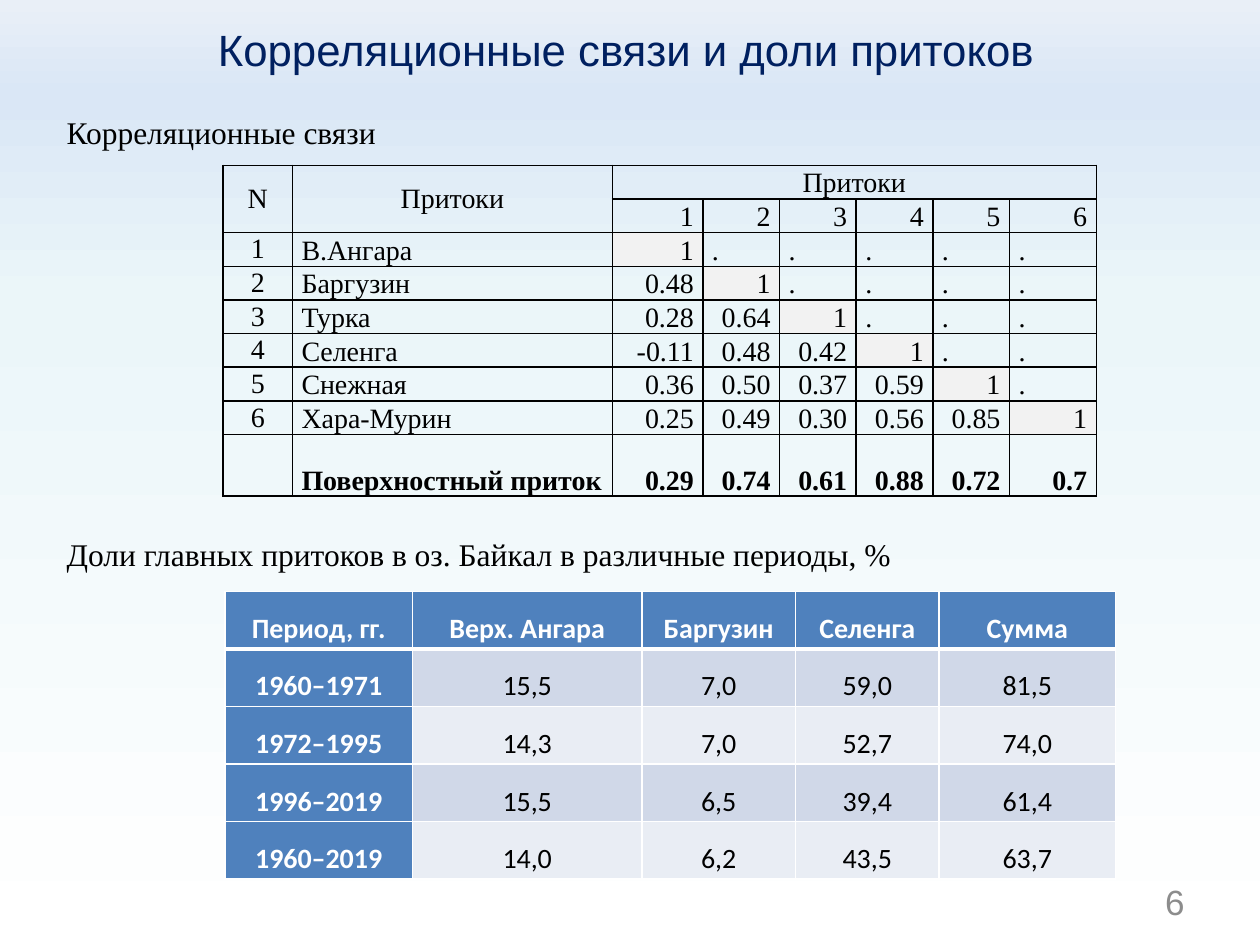
from copy import deepcopy

from lxml.etree import SubElement
from pptx import Presentation
from pptx.dml.color import RGBColor
from pptx.enum.text import MSO_ANCHOR, MSO_AUTO_SIZE, PP_ALIGN
from pptx.oxml.ns import qn
from pptx.util import Pt

NAVY = RGBColor(0x00, 0x20, 0x60)
BLACK = RGBColor(0x00, 0x00, 0x00)
WHITE = RGBColor(0xFF, 0xFF, 0xFF)
GRAY = RGBColor(0x8C, 0x8C, 0x8C)
PALE = RGBColor(0xF2, 0xF2, 0xF2)
BLUE = RGBColor(0x4F, 0x81, 0xBD)
BANDS = RGBColor(0xD0, 0xD8, 0xE8), RGBColor(0xE9, 0xED, 0xF4)
SKY = [
    (0, RGBColor(0xE9, 0xEF, 0xF7)),
    (0.1, RGBColor(0xDA, 0xE7, 0xF6)),
    (0.32, RGBColor(0xEB, 0xF6, 0xF9)),
    (1, WHITE),
]
SERIF, SANS, BODY = "Times New Roman", "Arial", "Calibri"
LEFT, MID, RIGHT = PP_ALIGN.LEFT, PP_ALIGN.CENTER, PP_ALIGN.RIGHT

RIVERS = ["В.Ангара", "Баргузин", "Турка", "Селенга", "Снежная", "Хара-Мурин"]
LINKS = [
    [],
    ["0.48"],
    ["0.28", "0.64"],
    ["-0.11", "0.48", "0.42"],
    ["0.36", "0.50", "0.37", "0.59"],
    ["0.25", "0.49", "0.30", "0.56", "0.85"],
]
INFLOW = ["", "Поверхностный приток", "0.29", "0.74", "0.61", "0.88", "0.72", "0.7"]
SHARES = [
    ["Период, гг.", "Верх. Ангара", "Баргузин", "Селенга", "Сумма"],
    ["1960–1971", "15,5", "7,0", "59,0", "81,5"],
    ["1972–1995", "14,3", "7,0", "52,7", "74,0"],
    ["1996–2019", "15,5", "6,5", "39,4", "61,4"],
    ["1960–2019", "14,0", "6,2", "43,5", "63,7"],
]


def write(frame, text, size, font, color, align=LEFT, bold=False):
    """Put one formatted run into the first paragraph of a frame."""
    para = frame.paragraphs[0]
    para.alignment = align
    run = para.add_run()
    run.text = text
    run.font.size = Pt(size)
    run.font.name = font
    run.font.bold = bold
    run.font.color.rgb = color
    return para


def paint(slide):
    """Fill the slide background with a vertical gradient."""
    fill = slide.background.fill
    fill.gradient()
    fill.gradient_angle = 270
    stops = slide.element.find(".//" + qn("a:gsLst"))
    while len(stops) < len(SKY):
        stops.append(deepcopy(stops[0]))
    for stop, (place, color) in zip(fill.gradient_stops, SKY):
        stop.position = place
        stop.color.rgb = color


def head(slide, box, text):
    """Place and format the title placeholder."""
    title = slide.shapes.title
    title.left, title.top, title.width, title.height = map(Pt, box)
    frame = title.text_frame
    frame.auto_size = MSO_AUTO_SIZE.NONE
    frame.vertical_anchor = MSO_ANCHOR.TOP
    write(frame, text, 25, SANS, NAVY, MID)


def label(slide, box, text, size=18, font=SERIF, color=BLACK, align=LEFT):
    """Place a single line of text in a box."""
    frame = slide.shapes.add_textbox(*map(Pt, box)).text_frame
    frame.word_wrap = True
    frame.vertical_anchor = MSO_ANCHOR.MIDDLE
    write(frame, text, size, font, color, align)


def grid(slide, box, parts, heights):
    """Add a plain table whose columns share the width of the box."""
    shape = slide.shapes.add_table(len(heights), len(parts), *map(Pt, box))
    table = shape.table
    table.first_row = table.horz_banding = False
    for col, part in zip(table.columns, parts):
        col.width = Pt(round(box[2] * part / sum(parts), 2))
    for row, height in zip(table.rows, heights):
        row.height = Pt(height)
    return table


def edge(cell, color, base=1):
    """Draw the four borders of a cell, the lower one in its own width."""
    props = cell._tc.get_or_add_tcPr()
    for side, width in zip("LRTB", (1, 1, 1, base)):
        line = SubElement(props, qn("a:ln" + side), w=str(Pt(width)))
        solid = SubElement(line, qn("a:solidFill"))
        SubElement(solid, qn("a:srgbClr"), val=str(color))


def shade(cell, color):
    """Fill a cell, or leave it clear, and set its margins."""
    if color is None:
        cell.fill.background()
    else:
        cell.fill.solid()
        cell.fill.fore_color.rgb = color
    cell.margin_left = cell.margin_right = Pt(5.2)
    cell.margin_top = cell.margin_bottom = Pt(0)


def matrix(slide, box):
    """Build the table of correlations between the rivers."""
    count = len(RIVERS)
    rows = [["N", "Притоки", "Притоки"] + [""] * (count - 1)]
    rows.append(["", ""] + [str(n + 1) for n in range(count)])
    for n, (name, links) in enumerate(zip(RIVERS, LINKS)):
        rows.append([str(n + 1), name, *links, "1"] + ["."] * (count - 1 - n))
    rows.append(INFLOW)
    last = len(rows) - 1
    heights = [19.2] * last + [35.3]
    table = grid(slide, box, [39.6, 182.8, 51.8] + [43.8] * 4 + [49.6], heights)
    for r, row in enumerate(rows):
        for c, text in enumerate(row):
            cell = table.cell(r, c)
            edge(cell, BLACK)
            shade(cell, PALE if r == c and 2 <= r < last else None)
            center = r == 0 or c == 0
            middle = c == 0 or (r == 0 and c == 1)
            cell.vertical_anchor = MSO_ANCHOR.MIDDLE if middle else MSO_ANCHOR.BOTTOM
            align = MID if center else LEFT if c == 1 or text == "." else RIGHT
            if text:
                write(cell.text_frame, text, 16, SERIF, BLACK, align, r == last)
    for c in (0, 1):
        table.cell(0, c).merge(table.cell(1, c))
    table.cell(0, 2).merge(table.cell(0, count + 1))


def shares(slide, box):
    """Build the banded table of river shares by period."""
    heights = [box[3] / len(SHARES)] * len(SHARES)
    table = grid(slide, box, [1.49, 1.82, 1.22, 1.14, 1.4], heights)
    for r, row in enumerate(SHARES):
        for c, text in enumerate(row):
            cell = table.cell(r, c)
            strong = r == 0 or c == 0
            edge(cell, WHITE, 3 if r == 0 else 1)
            shade(cell, BLUE if strong else BANDS[(r - 1) % 2])
            cell.vertical_anchor = MSO_ANCHOR.MIDDLE
            color = WHITE if strong else BLACK
            para = write(cell.text_frame, text, 16, BODY, color, MID, strong)
            para.line_spacing = 1.5


def main():
    """Build the slide and save it."""
    deck = Presentation()
    deck.slide_width, deck.slide_height = Pt(720), Pt(540)
    slide = deck.slides.add_slide(deck.slide_layouts[5])
    paint(slide)
    head(slide, (20, 9.5, 675, 37.5), "Корреляционные связи и доли притоков")
    label(slide, (31, 61, 395, 29), "Корреляционные связи")
    matrix(slide, (127.5, 94.5, 499, 189))
    label(slide, (31, 302, 487, 29),
          "Доли главных притоков в оз. Байкал в различные периоды, %")
    shares(slide, (128.5, 338, 509, 164.5))
    label(slide, (516, 500.5, 168, 29), "6", 20, SANS, GRAY, RIGHT)
    deck.save("out.pptx")


if __name__ == "__main__":
    main()
